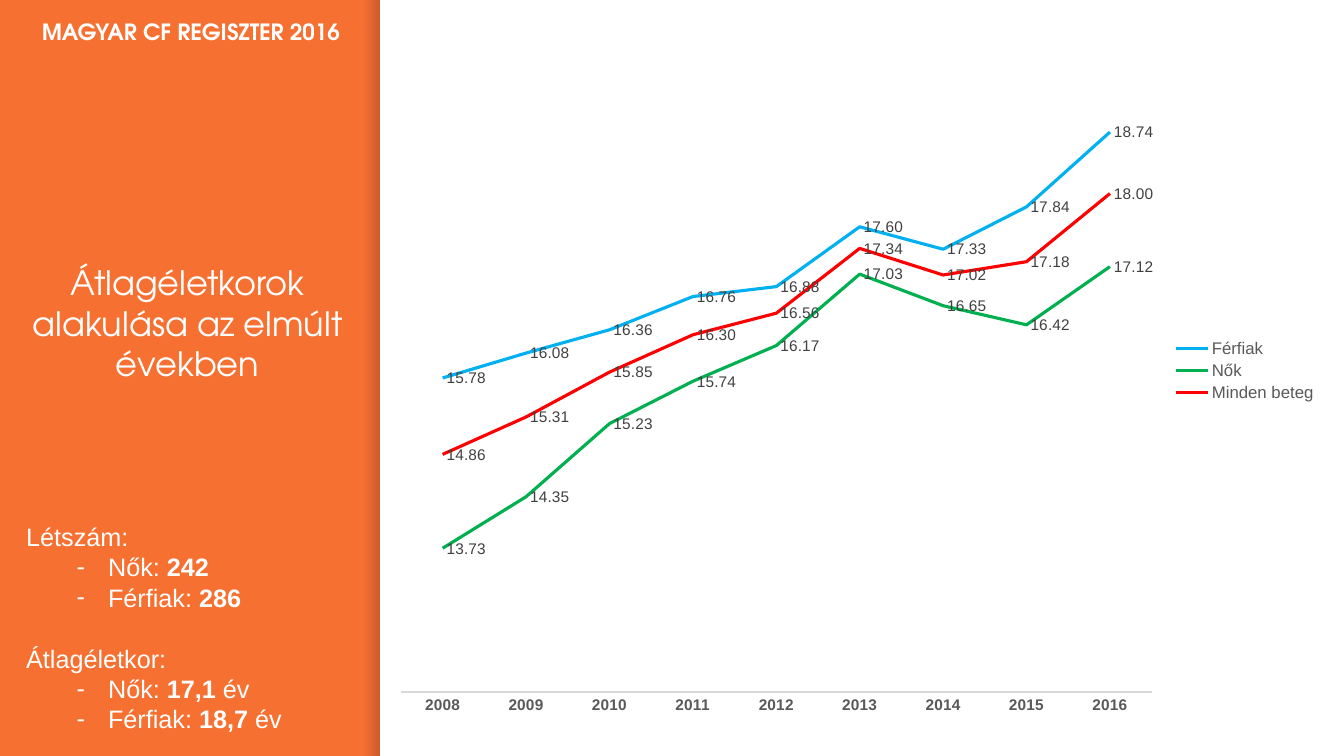
"""Build the slide on mean ages in the 2016 Hungarian CF register."""
from dataclasses import dataclass
from typing import Any, NamedTuple

from lxml import etree
from pptx import Presentation
from pptx import util as u
from pptx.chart import data as cd
from pptx.dml import color as col
from pptx.enum import chart as ec, shapes as es, text as et
from pptx.oxml import ns


@dataclass(frozen=True)
class Theme:
    orange: str = "F67031"
    white: str = "FFFFFF"
    shade: str = "000014"
    label: str = "404040"
    axis: str = "595959"
    rule: str = "D9D9D9"
    display: str = "TeX Gyre Adventor"
    sans: str = "Arial"
    title: float = 24
    header: float = 16
    body: float = 18
    legend: float = 12
    small: float = 11


class Box(NamedTuple):
    left: float
    top: float
    width: float
    height: float


class Series(NamedTuple):
    name: str
    color: str
    values: tuple[float, ...]


class Fact(NamedTuple):
    label: str
    value: str = ""
    unit: str = ""
    bullet: bool = False
    gap: float = 0


THEME = Theme()
SIZE = Box(0, 0, 960, 540)
SHADE = Box(260, 0, 11.5, 540)
PANEL = Box(271.5, 0, 688.5, 540)
TITLE = Box(11.5, 180, 244.8, 81.4)
HEADER = Box(0, 9.4, 272.9, 26.6)
CHART = Box(272.9, 9.4, 675.4, 510.5)
FACTS_BOX = Box(11.5, 368.6, 244.8, 159.8)
LINE_PITCH = 21.7
PLOT_LAYOUT = {"x": 0.02, "y": 0.02, "w": 0.794, "h": 0.93}

YEARS = [str(year) for year in range(2008, 2017)]
SERIES = (
    Series("Férfiak", "00B0F0", (15.78, 16.08, 16.36, 16.76, 16.88, 17.6, 17.33, 17.84, 18.74)),
    Series("Nők", "00B050", (13.73, 14.35, 15.23, 15.74, 16.17, 17.03, 16.65, 16.42, 17.12)),
    Series("Minden beteg", "FF0000", (14.86, 15.31, 15.85, 16.3, 16.56, 17.34, 17.02, 17.18, 18)),
)
FACTS = (
    Fact("Létszám:"),
    Fact("Nők: ", "242", bullet=True),
    Fact("Férfiak: ", "286", bullet=True),
    Fact("Átlagéletkor:", gap=LINE_PITCH),
    Fact("Nők: ", "17,1", " év", bullet=True),
    Fact("Férfiak: ", "18,7", " év", bullet=True),
)


def rgb(value: str) -> col.RGBColor:
    return col.RGBColor.from_string(value)


def points(box: Box) -> list[u.Length]:
    return [u.Pt(value) for value in box]


def apply(target: Any, values: dict[str, Any]) -> None:
    for name, value in values.items():
        setattr(target, name, value)


def style(font: Any, size: float, color: str, name: str = THEME.sans, bold: bool = False) -> None:
    apply(font, {"size": u.Pt(size), "name": name, "bold": bold})
    font.color.rgb = rgb(color)


def place(shape: Any, box: Box) -> None:
    apply(shape, dict(zip(("left", "top", "width", "height"), points(box))))


def set_frame(frame: Any, inset_x: float, inset_y: float) -> None:
    apply(frame, {
        "word_wrap": True,
        "auto_size": et.MSO_AUTO_SIZE.NONE,
        "vertical_anchor": et.MSO_ANCHOR.TOP,
        "margin_left": u.Pt(inset_x), "margin_right": u.Pt(inset_x),
        "margin_top": u.Pt(inset_y), "margin_bottom": u.Pt(inset_y),
    })


def add_panel(page: Any, box: Box) -> Any:
    panel = page.shapes.add_shape(es.MSO_SHAPE.RECTANGLE, *points(box))
    panel.shadow.inherit = False
    panel.line.fill.background()
    return panel


def add_background(page: Any) -> None:
    page.background.fill.solid()
    page.background.fill.fore_color.rgb = rgb(THEME.orange)
    shade = add_panel(page, SHADE)
    shade.fill.gradient()
    shade.fill.gradient_angle = 0
    for stop in shade.fill.gradient_stops:
        stop.color.rgb = rgb(THEME.shade)
    for color, alpha in zip(shade.element.iter(ns.qn("a:srgbClr")), (0, 20000)):
        etree.SubElement(color, ns.qn("a:alpha"), val=str(alpha))
    panel = add_panel(page, PANEL)
    panel.fill.solid()
    panel.fill.fore_color.rgb = rgb(THEME.white)


def write_heading(shape: Any, words: str, size: float, inset: tuple[float, float], bold: bool) -> None:
    set_frame(shape.text_frame, *inset)
    para = shape.text_frame.paragraphs[0]
    apply(para, {"alignment": et.PP_ALIGN.CENTER, "line_spacing": 1.0})
    span = para.add_run()
    span.text = words
    style(span.font, size, THEME.white, THEME.display, bold)


def write_facts(shape: Any, facts: tuple[Fact, ...]) -> None:
    place(shape, FACTS_BOX)
    frame = shape.text_frame
    set_frame(frame, 7.2, 3.6)
    for index, fact in enumerate(facts):
        para = frame.add_paragraph() if index else frame.paragraphs[0]
        apply(para, {
            "level": int(fact.bullet),
            "alignment": et.PP_ALIGN.LEFT,
            "line_spacing": u.Pt(LINE_PITCH),
            "space_before": u.Pt(fact.gap),
            "space_after": u.Pt(0),
        })
        props = para._p.get_or_add_pPr()
        margin, indent = (58.5, -22.5) if fact.bullet else (0, 0)
        props.set("marL", str(u.Pt(margin)))
        props.set("indent", str(u.Pt(indent)))
        if fact.bullet:
            etree.SubElement(props, ns.qn("a:buChar"), char="-")
        else:
            etree.SubElement(props, ns.qn("a:buNone"))
        for words, bold in ((fact.label, False), (fact.value, True), (fact.unit, False)):
            if words:
                span = para.add_run()
                span.text = words
                style(span.font, THEME.body, THEME.white, bold=bold)


def fix_plot_area(chart: Any) -> None:
    area = chart._chartSpace.chart.plotArea
    for old in area.findall(ns.qn("c:layout")):
        area.remove(old)
    layout = etree.Element(ns.qn("c:layout"))
    area.insert(0, layout)
    manual = etree.SubElement(layout, ns.qn("c:manualLayout"))
    settings = {"layoutTarget": "inner", "xMode": "edge", "yMode": "edge", **PLOT_LAYOUT}
    for name, value in settings.items():
        etree.SubElement(manual, ns.qn(f"c:{name}"), val=str(value))


def add_age_chart(page: Any) -> None:
    data = cd.CategoryChartData(number_format="0.00")
    data.categories = YEARS
    for item in SERIES:
        data.add_series(item.name, item.values)
    chart = page.shapes.add_chart(ec.XL_CHART_TYPE.LINE, *points(CHART), data).chart
    apply(chart, {"has_title": False, "has_legend": True})
    apply(chart.legend, {"position": ec.XL_LEGEND_POSITION.RIGHT, "include_in_layout": False})
    style(chart.legend.font, THEME.legend, THEME.axis)
    apply(chart.value_axis, {"minimum_scale": 12, "maximum_scale": 20,
                             "has_major_gridlines": False, "visible": False})
    axis = chart.category_axis
    axis.major_tick_mark = ec.XL_TICK_MARK.NONE
    style(axis.tick_labels.font, THEME.small, THEME.axis, bold=True)
    axis.format.line.width = u.Pt(0.75)
    axis.format.line.color.rgb = rgb(THEME.rule)
    for line, item in zip(chart.plots[0].series, SERIES):
        line.smooth = False
        line.marker.style = ec.XL_MARKER_STYLE.NONE
        line.format.line.width = u.Pt(2.25)
        line.format.line.color.rgb = rgb(item.color)
        labels = line.data_labels
        apply(labels, {"show_value": True, "number_format": "0.00",
                       "number_format_is_linked": False,
                       "position": ec.XL_LABEL_POSITION.RIGHT})
        style(labels.font, THEME.small, THEME.label)
    fix_plot_area(chart)


def main() -> None:
    deck = Presentation()
    apply(deck, {"slide_width": u.Pt(SIZE.width), "slide_height": u.Pt(SIZE.height)})
    page = deck.slides.add_slide(deck.slide_layouts[1])
    add_background(page)
    title, body = page.placeholders
    place(title, TITLE)
    write_heading(title, "Átlagéletkorok alakulása az elmúlt években", THEME.title, (7.2, 7.2), False)
    header = page.shapes.add_textbox(*points(HEADER))
    write_heading(header, "MAGYAR CF REGISZTER 2016", THEME.header, (7.2, 3.6), True)
    add_age_chart(page)
    write_facts(body, FACTS)
    deck.save("out.pptx")


if __name__ == "__main__":
    main()
